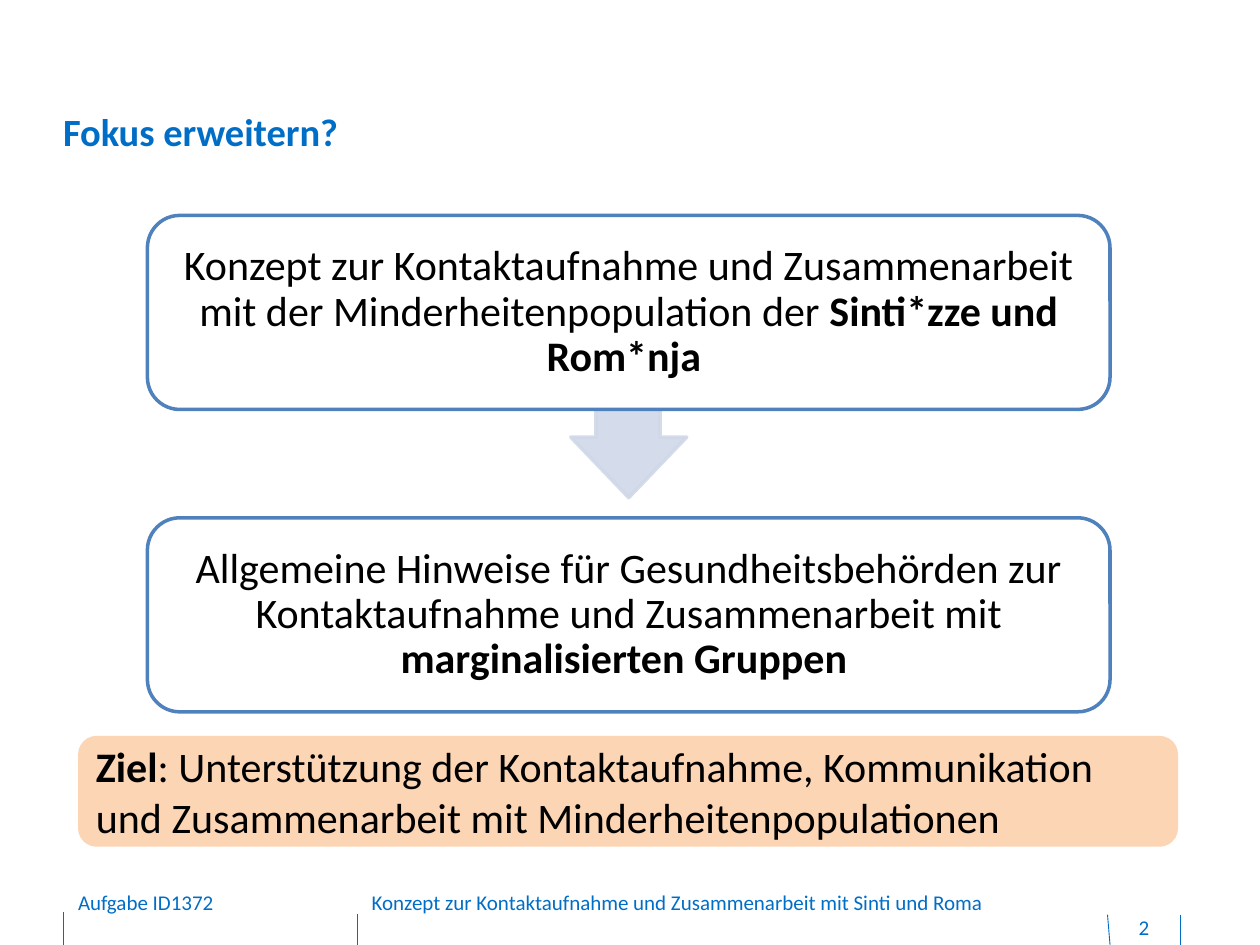
from dataclasses import dataclass

from lxml import etree
from pptx import Presentation
from pptx.dml.color import RGBColor
from pptx.enum import shapes, text
from pptx.oxml import ns
from pptx.util import Inches, Pt


@dataclass(frozen=True)
class Theme:
    font: str = "Calibri"
    blue: str = "006EC7"
    border: str = "4F81BD"
    arrow: str = "D0D8E8"
    goal: str = "FCD5B5"
    white: str = "FFFFFF"
    black: str = "000000"
    title_size: int = 22
    body_size: int = 24
    footer_size: int = 12


@dataclass(frozen=True)
class Run:
    words: str
    bold: bool = False


@dataclass(frozen=True)
class Panel:
    at: tuple[float, float, float, float]
    runs: list[Run]
    fill: str
    border: str | None = None
    align: text.PP_ALIGN = text.PP_ALIGN.CENTER
    spacing: float = 0.9


@dataclass(frozen=True)
class FooterField:
    at: tuple[float, float, float, float]
    words: str
    align: text.PP_ALIGN = text.PP_ALIGN.LEFT


THEME = Theme()
LEFT, CENTER = text.PP_ALIGN.LEFT, text.PP_ALIGN.CENTER
STEP_X, STEP_W, STEP_H = 1.17, 7.64, 1.54

PANELS = [
    Panel((STEP_X, 1.71, STEP_W, STEP_H),
          [Run("Konzept zur Kontaktaufnahme und Zusammenarbeit mit der "
               "Minderheitenpopulation der "),
           Run("Sinti*zze und Rom*nja ", bold=True)],
          THEME.white, THEME.border),
    Panel((STEP_X, 4.11, STEP_W, STEP_H),
          [Run("Allgemeine Hinweise für Gesundheitsbehörden zur "
               "Kontaktaufnahme und Zusammenarbeit mit "),
           Run("marginalisierten Gruppen ", bold=True)],
          THEME.white, THEME.border),
    Panel((0.62, 5.84, 8.73, 0.88),
          [Run("Ziel", bold=True),
           Run(": Unterstützung der Kontaktaufnahme, Kommunikation und "
               "Zusammenarbeit mit Minderheitenpopulationen")],
          THEME.goal, align=LEFT, spacing=1.0),
]

FOOTER = [
    FooterField((8.81, 7.26, 0.54, 0.2), "2", CENTER),
    FooterField((0.62, 7.06, 2.03, 0.39), "Aufgabe ID1372"),
    FooterField((2.95, 7.06, 5.67, 0.39),
                "Konzept zur Kontaktaufnahme und Zusammenarbeit mit Sinti und Roma"),
]

# Upper and lower x, then top y, of each footer rule
FOOTER_RULES = [(8.79, 8.81, 7.26), (2.84, 2.84, 7.25),
                (0.5, 0.5, 7.24), (9.37, 9.37, 7.26)]

ARROW_OUTLINE = [(4.53, 3.47), (4.73, 3.47), (4.73, 2.89), (5.24, 2.89),
                 (5.24, 3.47), (5.45, 3.47), (4.99, 3.95)]


def write(frame, runs: list[Run], *, size: int, color: str, align=LEFT,
          anchor=text.MSO_ANCHOR.TOP, spacing: float = 1.0, insets=None) -> None:
    frame.word_wrap = True
    frame.auto_size = text.MSO_AUTO_SIZE.NONE
    frame.vertical_anchor = anchor
    if insets is not None:
        (frame.margin_left, frame.margin_top,
         frame.margin_right, frame.margin_bottom) = map(Inches, insets)
    paragraph = frame.paragraphs[0]
    paragraph.alignment = align
    paragraph.line_spacing = spacing
    for part in runs:
        run = paragraph.add_run()
        run.text = part.words
        run.font.name = THEME.font
        run.font.size = Pt(size)
        run.font.bold = part.bold
        run.font.color.rgb = RGBColor.from_string(color)


def paint(shape, fill: str, border: str | None) -> None:
    shape.shadow.inherit = False
    shape.fill.solid()
    shape.fill.fore_color.rgb = RGBColor.from_string(fill)
    if border is None:
        shape.line.fill.background()
    else:
        shape.line.color.rgb = RGBColor.from_string(border)
        shape.line.width = Pt(2)


def draw_panel(slide, panel: Panel) -> None:
    box = slide.shapes.add_shape(shapes.MSO_SHAPE.ROUNDED_RECTANGLE,
                                 *map(Inches, panel.at))
    paint(box, panel.fill, panel.border)
    write(box.text_frame, panel.runs, size=THEME.body_size, color=THEME.black,
          align=panel.align, anchor=text.MSO_ANCHOR.MIDDLE, spacing=panel.spacing)


def draw_arrow(slide) -> None:
    start, *rest = [(Inches(x), Inches(y)) for x, y in ARROW_OUTLINE]
    builder = slide.shapes.build_freeform(*start)
    builder.add_line_segments(rest, close=True)
    arrow = builder.convert_to_shape()
    paint(arrow, THEME.arrow, THEME.arrow)
    # 90 % opacity for fill and outline
    for color in arrow.element.spPr.iter(ns.qn("a:srgbClr")):
        etree.SubElement(color, ns.qn("a:alpha"), val="90000")


def draw_rule(slide, x_top: float, x_bottom: float, top: float) -> None:
    rule = slide.shapes.add_connector(
        shapes.MSO_CONNECTOR.STRAIGHT,
        Inches(x_top), Inches(top), Inches(x_bottom), Inches(7.5))
    rule.line.color.rgb = RGBColor.from_string(THEME.blue)
    rule.line.width = Pt(0.5)
    etree.SubElement(rule.element.spPr, ns.qn("a:effectLst"))


def draw_footer_field(slide, field: FooterField) -> None:
    box = slide.shapes.add_textbox(*map(Inches, field.at))
    write(box.text_frame, [Run(field.words)], size=THEME.footer_size,
          color=THEME.blue, align=field.align, insets=(0, 0, 0, 0.05))


def main() -> None:
    deck = Presentation()
    deck.slide_width, deck.slide_height = Inches(10), Inches(7.5)
    slide = deck.slides.add_slide(deck.slide_layouts[5])

    # Title
    title = slide.shapes.title
    title.left, title.top, title.width, title.height = map(
        Inches, (0.5, 0.86, 8.85, 0.37))
    write(title.text_frame, [Run("Fokus erweitern?", bold=True)],
          size=THEME.title_size, color=THEME.blue, insets=(0, 0, 0, 0))

    # Footer
    for rule in FOOTER_RULES:
        draw_rule(slide, *rule)
    for field in FOOTER:
        draw_footer_field(slide, field)

    # Two steps with the arrow behind them, then the goal
    draw_arrow(slide)
    for panel in PANELS:
        draw_panel(slide, panel)

    deck.save("out.pptx")


if __name__ == "__main__":
    main()
